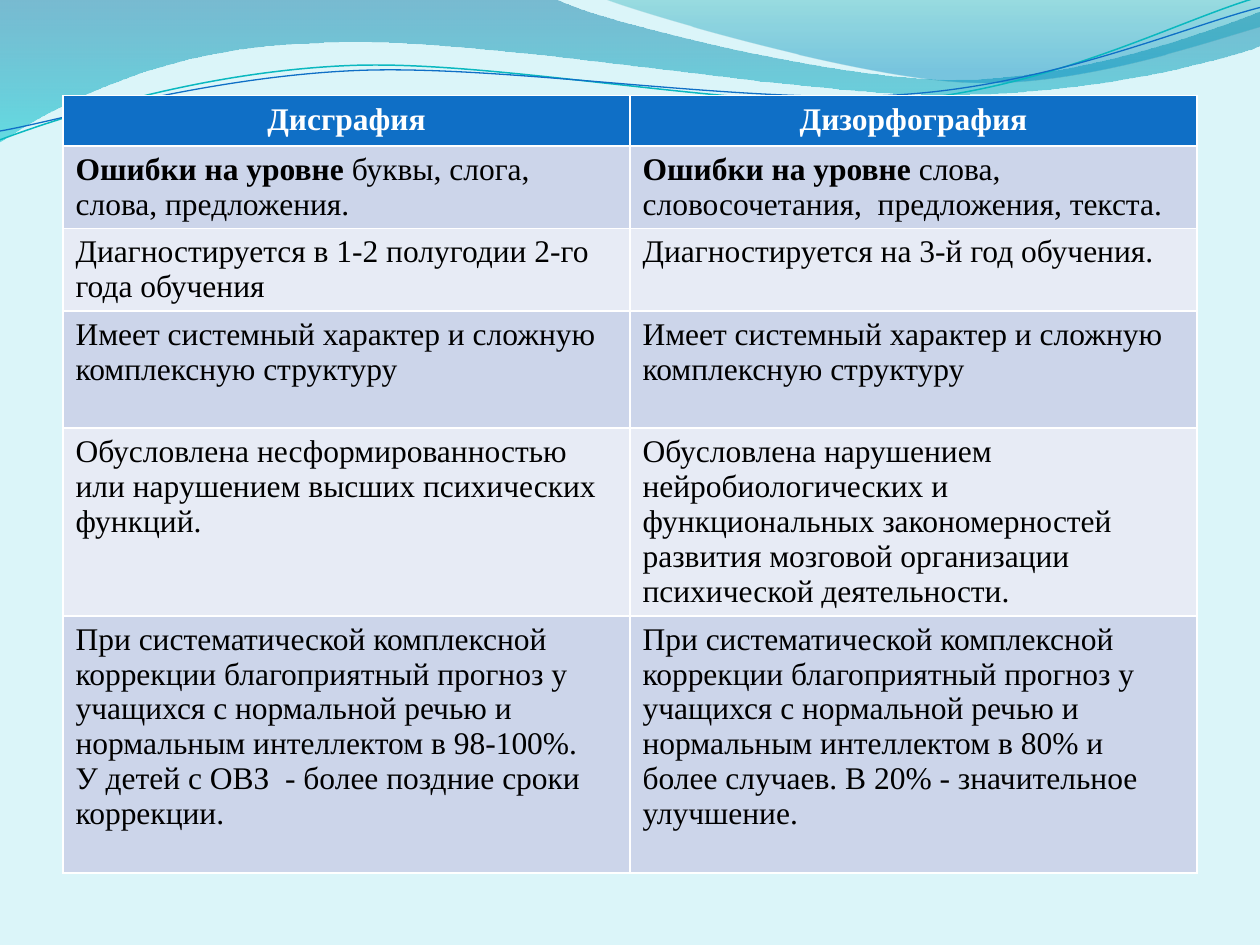
from math import cos, radians, sin

from lxml.etree import SubElement
from pptx import Presentation
from pptx.dml.color import RGBColor
from pptx.enum.text import PP_ALIGN
from pptx.oxml.ns import qn
from pptx.util import Inches, Pt

WHITE = RGBColor(0xFF, 0xFF, 0xFF)
BLACK = RGBColor(0x00, 0x00, 0x00)
BACKGROUND = RGBColor(0xDB, 0xF5, 0xF9)
BLUE = RGBColor(0x0F, 0x6F, 0xC6)
TEAL = RGBColor(0x0A, 0xB8, 0xBF)
DARK_BAND = RGBColor(0xCC, 0xD5, 0xEA)
LIGHT_BAND = RGBColor(0xE7, 0xEB, 0xF5)

# Gradient stops: position, colour, opacity in percent
LEFT_GRADIENT = [(0, RGBColor(0x00, 0x74, 0xA1), 45), (1, RGBColor(0x00, 0xC6, 0xCF), 55)]
RIGHT_GRADIENT = [(0, RGBColor(0x00, 0xA1, 0xA9), 30), (0.8, RGBColor(0x00, 0x8B, 0xBF), 45)]

# Outlines: a pair is a corner, six numbers are a Bezier segment
LEFT_WAVE = [(0, 0), (4.4, -0.01), (4.76, 0.17, 6.64, 0.63, 7.58, 0.63),
             (8.53, 0.63, 9.58, 0.26, 10, 0.09), (10.01, 0.36),
             (9.83, 0.44, 8.7, 0.76, 7.46, 0.75), (6.22, 0.75, 3.82, 0.28, 2.57, 0.34),
             (1.29, 0.36, 0.46, 0.83, -0.01, 1.13)]
RIGHT_WAVE = [(4.79, -0.01), (5.09, 0.11, 6.82, 0.62, 7.69, 0.65),
              (8.56, 0.69, 9.61, 0.32, 10, 0.21), (10, 0)]
TEAL_CURVE = [(0, 1.11), (0.48, 0.93, 1.58, 0.57, 2.77, 0.52),
              (3.95, 0.47, 5.93, 0.89, 7.13, 0.8), (8.33, 0.71, 9.38, 0.15, 9.98, -0.02)]
BLUE_CURVE = [(0, 1.04), (0.47, 0.96, 1.64, 0.61, 2.83, 0.56),
              (4.03, 0.51, 5.97, 0.84, 7.17, 0.75), (8.36, 0.67, 9.41, 0.21, 10, 0.06)]
CURVE_TILT = -2.7

HEADERS = ["Дисграфия", "Дизорфография"]
ERRORS = "Ошибки на уровне "
STRUCTURE = "Имеет системный характер и сложную комплексную структуру"
PROGNOSIS = ("При систематической комплексной коррекции благоприятный прогноз у учащихся "
             "с нормальной речью и нормальным интеллектом в ")
# Each cell is a list of paragraphs; a pair is a bold lead and its continuation
ROWS = [
    ([(ERRORS, "буквы, слога, слова, предложения.")],
     [(ERRORS, "слова, словосочетания,  предложения, текста.")]),
    (["Диагностируется в 1-2 полугодии 2-го года обучения"],
     ["Диагностируется на 3-й год обучения."]),
    ([STRUCTURE], [STRUCTURE]),
    (["Обусловлена несформированностью или нарушением высших психических функций."],
     ["Обусловлена нарушением нейробиологических и функциональных закономерностей "
      "развития мозговой организации психической деятельности."]),
    ([PROGNOSIS + "98-100%.", "У детей с ОВЗ  - более поздние сроки коррекции."],
     [PROGNOSIS + "80% и более случаев. В 20% - значительное улучшение."]),
]
ROW_HEIGHTS = [0.4, 0.65, 0.65, 0.93, 1.49, 2.04]


def pairs(part):
    return list(zip(part[::2], part[1::2]))


def turn(outline, degrees, center):
    """Rotate every point of an outline clockwise about a center."""
    angle = radians(degrees)
    center_x, center_y = center
    turned = []
    for part in outline:
        numbers = []
        for x, y in pairs(part):
            across, down = x - center_x, y - center_y
            numbers += [center_x + across * cos(angle) - down * sin(angle),
                        center_y + across * sin(angle) + down * cos(angle)]
        turned.append(tuple(numbers))
    return turned


def add_text(paragraph, text, size=18, color=BLACK, bold=False, font="Times New Roman"):
    run = paragraph.add_run()
    run.text = text
    run.font.name = font
    run.font.size = Pt(size)
    run.font.bold = bold
    run.font.color.rgb = color


class SlideBuilder:
    def __init__(self, slide):
        self.slide = slide
        slide.background.fill.solid()
        slide.background.fill.fore_color.rgb = BACKGROUND

    def outline(self, outline, close):
        """Build a freeform, then join the three points of each Bezier segment."""
        points = [(Inches(x), Inches(y)) for part in outline for x, y in pairs(part)]
        builder = self.slide.shapes.build_freeform(*points[0])
        builder.add_line_segments(points[1:], close=close)
        shape = builder.convert_to_shape()
        shape.shadow.inherit = False
        segments = iter(list(shape.element.iter(qn("a:lnTo"))))
        for part in outline[1:]:
            first = next(segments)
            if len(part) == 6:
                first.tag = qn("a:cubicBezTo")
                for _ in range(2):
                    segment = next(segments)
                    first.append(segment[0])
                    segment.getparent().remove(segment)
        return shape

    def wave(self, outline, stops):
        shape = self.outline(outline, close=True)
        shape.line.fill.background()
        shape.fill.gradient()
        shape.fill.gradient_angle = 270
        for stop, (position, color, _) in zip(shape.fill.gradient_stops, stops):
            stop.position = position
            stop.color.rgb = color
        colors = shape.element.spPr.iter(qn("a:srgbClr"))
        for element, (_, _, opacity) in zip(colors, stops):
            SubElement(element, qn("a:alpha"), val=str(opacity * 1000))

    def curve(self, outline, color, width, center):
        shape = self.outline(turn(outline, -CURVE_TILT, center), close=False)
        shape.rotation = CURVE_TILT
        shape.fill.background()
        shape.line.color.rgb = color
        shape.line.width = Pt(width)

    def table(self, left, top, width, headers, rows, heights):
        table = self.slide.shapes.add_table(
            len(heights), len(headers), Inches(left), Inches(top),
            Inches(width), Inches(sum(heights))).table
        for row, height in zip(table.rows, heights):
            row.height = Inches(height)
        for column, header in enumerate(headers):
            cell = table.cell(0, column)
            self.fill_cell(cell, BLUE)
            paragraph = cell.text_frame.paragraphs[0]
            paragraph.alignment = PP_ALIGN.CENTER
            add_text(paragraph, header, color=WHITE, bold=True)
        for index, row in enumerate(rows, start=1):
            for column, paragraphs in enumerate(row):
                cell = table.cell(index, column)
                self.fill_cell(cell, DARK_BAND if index % 2 else LIGHT_BAND)
                self.write_cell(cell, paragraphs)

    def fill_cell(self, cell, color):
        cell.fill.solid()
        cell.fill.fore_color.rgb = color

    def write_cell(self, cell, paragraphs):
        frame = cell.text_frame
        for index, content in enumerate(paragraphs):
            paragraph = frame.add_paragraph() if index else frame.paragraphs[0]
            lead, text = content if isinstance(content, tuple) else ("", content)
            if lead:
                add_text(paragraph, lead, bold=True)
            add_text(paragraph, text)


def main():
    presentation = Presentation()
    presentation.slide_width = Inches(10)
    presentation.slide_height = Inches(7.5)
    builder = SlideBuilder(presentation.slides.add_slide(presentation.slide_layouts[6]))
    builder.wave(LEFT_WAVE, LEFT_GRADIENT)
    builder.wave(RIGHT_WAVE, RIGHT_GRADIENT)
    builder.curve(TEAL_CURVE, TEAL, 0.85, center=(4.99, 0.57))
    builder.curve(BLUE_CURVE, BLUE, 0.75, center=(5, 0.59))
    builder.table(0.5, 0.76, 9, HEADERS, ROWS, ROW_HEIGHTS)
    presentation.save("out.pptx")


if __name__ == "__main__":
    main()
